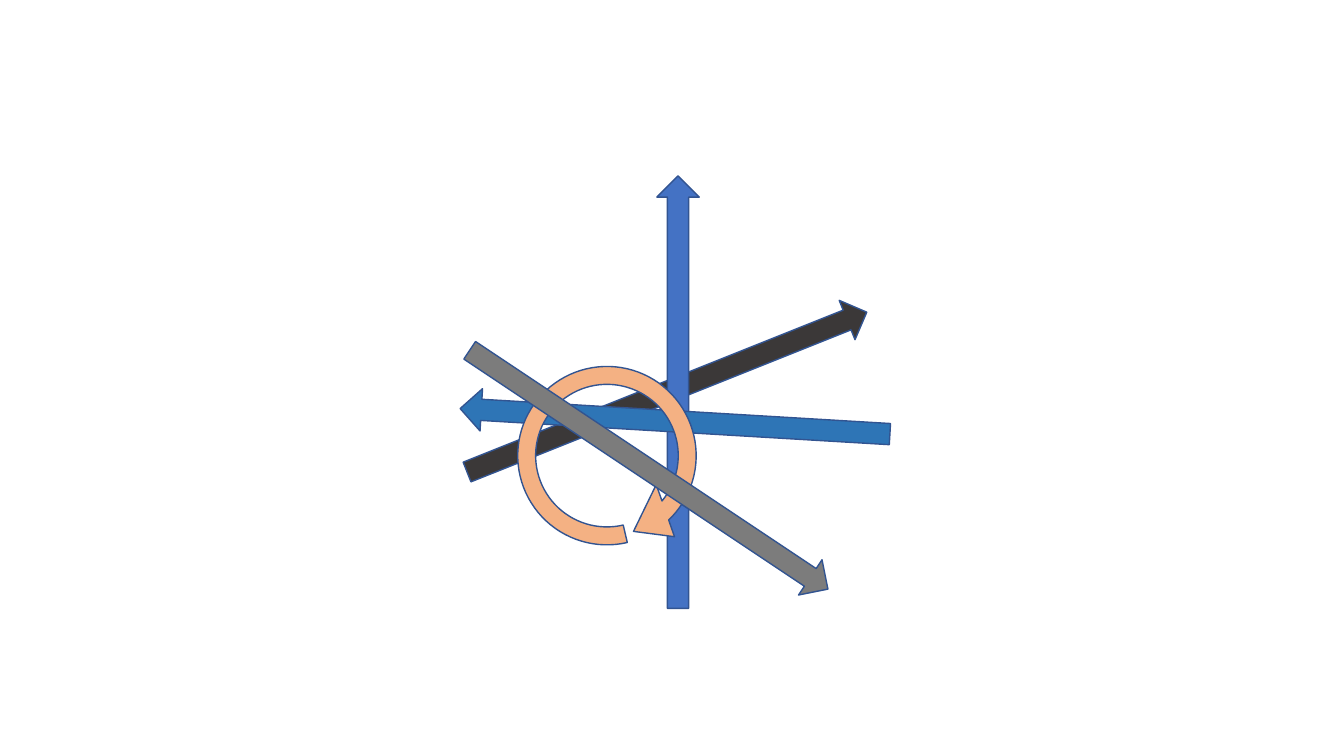
"""Build a slide with four crossing block arrows and one circular arrow."""
from pptx import Presentation
from pptx.dml.color import RGBColor
from pptx.enum.shapes import MSO_SHAPE
from pptx.util import Inches, Pt

RIGHT_ARROW = MSO_SHAPE.RIGHT_ARROW
CIRCULAR_ARROW = MSO_SHAPE.CIRCULAR_ARROW


def color(hex_value):
    """Return the colour for a hex string."""
    return RGBColor.from_string(hex_value)


class ArrowSlide:
    """Hold the arrow style and the group of arrows on the slide."""

    outline = "325491"
    outline_width = 1
    arrow_height = 0.42
    ring_size = 2.14

    def __init__(self, slide):
        """Start an empty group on the slide."""
        self.group = slide.shapes.add_group_shape()

    def add_shape(self, kind, box, rotation, fill):
        """Add a filled, outlined and rotated shape."""
        shape = self.group.shapes.add_shape(kind, *map(Inches, box))
        shape.shadow.inherit = False
        shape.rotation = rotation
        shape.fill.solid()
        formats = (
            (shape.fill.fore_color, {"rgb": color(fill)}),
            (shape.line.color, {"rgb": color(self.outline)}),
            (shape.line, {"width": Pt(self.outline_width)}),
        )
        for target, values in formats:
            for name, value in values.items():
                setattr(target, name, value)
        return shape

    def add_arrow(self, left, top, length, rotation, fill):
        """Add a straight block arrow."""
        box = (left, top, length, self.arrow_height)
        return self.add_shape(RIGHT_ARROW, box, rotation, fill)

    def add_ring(self, left, top, rotation, fill, adjustments):
        """Add a circular arrow with its adjustments."""
        box = (left, top, self.ring_size, self.ring_size)
        ring = self.add_shape(CIRCULAR_ARROW, box, rotation, fill)
        for index, value in enumerate(adjustments):
            ring.adjustments[index] = value
        return ring


def main():
    """Build and save the presentation."""
    presentation = Presentation()
    presentation.slide_width = Inches(13.33)
    presentation.slide_height = Inches(7.5)
    slide = presentation.slides.add_slide(presentation.slide_layouts[6])
    arrows = ArrowSlide(slide)
    arrows.add_arrow(4.48, 3.68, 4.27, 338.2, "3B3838")
    arrows.add_arrow(4.58, 3.68, 4.29, 270, "4472C4")
    arrows.add_arrow(4.56, 3.97, 4.27, 183.4, "2E75B6")
    arrows.add_ring(4.95, 3.45, 256.8, "F4B183", (0.083, 16.44, 87.89, 108, 0.128))
    arrows.add_arrow(4.3, 4.45, 4.27, 33.7, "7C7C7C")
    presentation.save("out.pptx")


if __name__ == "__main__":
    main()
